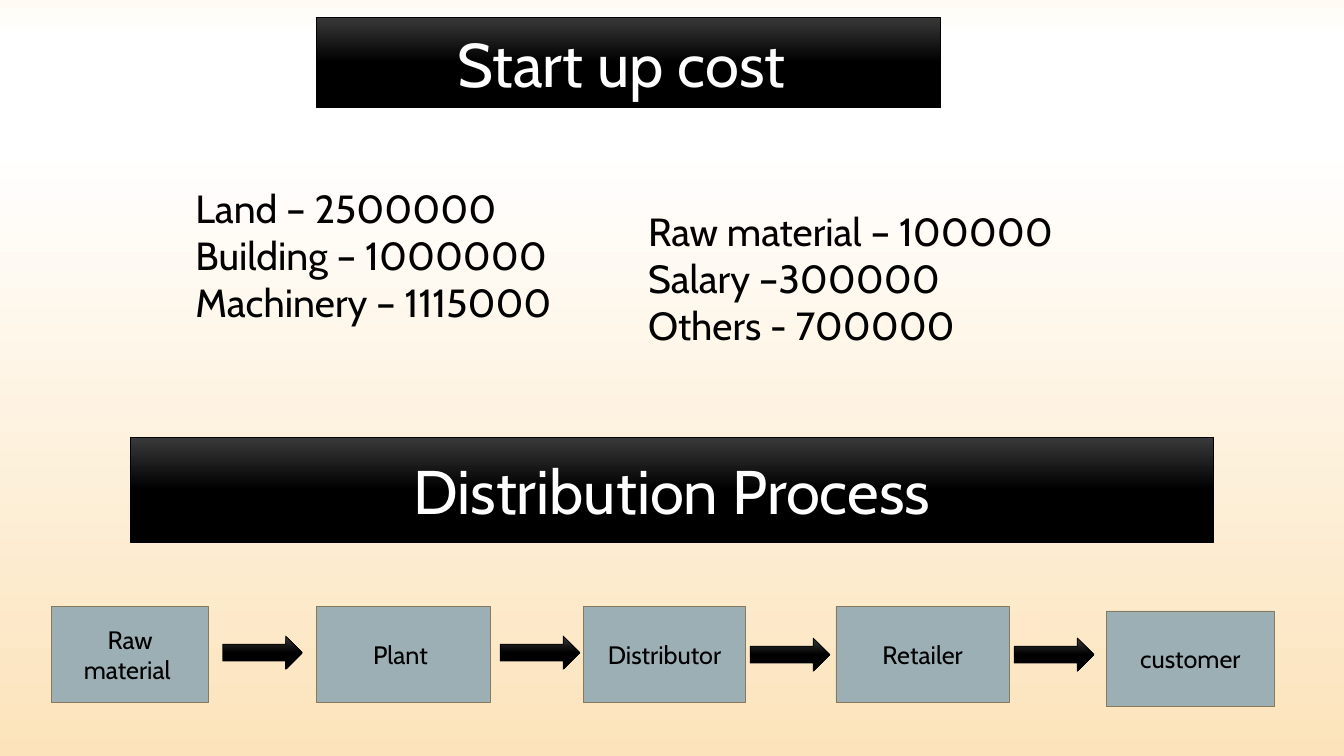
from lxml import etree
from pptx import Presentation
from pptx import util as u
from pptx.dml.color import RGBColor
from pptx.enum import shapes, text
from pptx.oxml.ns import qn

HUES = {
    "ink": "000000", "coal": "393939", "paper": "FFFFFF", "cream": "FFFAF4",
    "sand": "FCE3BB", "slate": "9BAFB5", "edge": "87795D",
}
DARK = [(0, "coal"), (50, "ink"), (100, "ink")]
DAWN = [(0, "cream"), (5, "paper"), (19, "paper"), (100, "sand")]
FACE = "Cabin"


def hue(name):
    return RGBColor.from_string(HUES[name])


def part(box, left, top, width, height):
    x, y, w, h = box
    return (int(x + w * left / 100), int(y + h * top / 100),
            int(w * width / 100), int(h * height / 100))


def fade(fill, root, stops):
    fill.gradient()
    fill.gradient_angle = 270
    ramp = next(root.iter(qn("a:gsLst")))
    for stop in list(ramp):
        ramp.remove(stop)
    for share, name in stops:
        stop = etree.SubElement(ramp, qn("a:gs"), pos=str(share * 1000))
        etree.SubElement(stop, qn("a:srgbClr"), val=HUES[name])


def edge(shape, name):
    shape.line.color.rgb = hue(name)
    shape.line.width = u.Pt(0.5)


def darken(shape):
    fade(shape.fill, shape._element, DARK)
    edge(shape, "ink")


def write(shape, lines, size, name, align):
    frame = shape.text_frame
    frame.word_wrap = True
    frame.text = "\n".join(lines)
    for line in frame.paragraphs:
        line.alignment = align
        line.font.size = u.Pt(size)
        line.font.name = FACE
        line.font.color.rgb = hue(name)


def center(shape, words, size, name):
    write(shape, [words], size, name, text.PP_ALIGN.CENTER)
    shape.text_frame.vertical_anchor = text.MSO_ANCHOR.MIDDLE


def block(slide, kind, box):
    shape = slide.shapes.add_shape(kind, *box)
    shape.shadow.inherit = False
    return shape


def banner(shape, words):
    darken(shape)
    center(shape, words, 44, "paper")


def heading(slide, box, words):
    title = slide.shapes.title
    title.left, title.top, title.width, title.height = box
    banner(title, words)
    title.text_frame.auto_size = text.MSO_AUTO_SIZE.NONE


def costs(slide, box, lines):
    note = slide.shapes.add_textbox(*box)
    write(note, lines, 28, "ink", text.PP_ALIGN.LEFT)
    note.text_frame.auto_size = text.MSO_AUTO_SIZE.SHAPE_TO_FIT_TEXT


def flow(slide, box):
    steps = [
        ("Raw material ", 0, 0, 12.86),
        ("Plant ", 21.68, 0, 14.18),
        ("Distributor", 43.53, 0, 13.19),
        ("Retailer", 64.14, 0, 14.18),
        ("customer", 86.23, 4.04, 13.77),
    ]
    for words, left, top, width in steps:
        step = block(slide, shapes.MSO_SHAPE.RECTANGLE,
                     part(box, left, top, width, 95.96))
        step.fill.solid()
        step.fill.fore_color.rgb = hue("slate")
        edge(step, "edge")
        center(step, words, 18, "ink")
    for left, top in [(14.01, 29.29), (36.69, 29.29),
                      (57.13, 31.31), (78.73, 31.31)]:
        darken(block(slide, shapes.MSO_SHAPE.RIGHT_ARROW,
                     part(box, left, top, 6.51, 33.33)))


def main():
    deck = Presentation()
    deck.slide_width, deck.slide_height = u.Inches(13.33), u.Inches(7.5)
    page = (0, 0, deck.slide_width, deck.slide_height)
    slide = deck.slides.add_slide(deck.slide_layouts[5])
    fade(slide.background.fill, slide._element, DAWN)
    heading(slide, part(page, 23.55, 2.27, 46.43, 12), "Start up cost ")
    costs(slide, part(page, 13.8, 23.73, 29.33, 26.53),
          ["Land – 2500000", "Building – 1000000", "Machinery – 1115000"])
    costs(slide, part(page, 47.48, 26.8, 32.33, 20.13),
          ["Raw material – 100000", "Salary –300000", "Others - 700000"])
    banner(block(slide, shapes.MSO_SHAPE.RECTANGLE,
                 part(page, 9.68, 57.87, 80.63, 13.87)),
           "Distribution Process")
    flow(slide, part(page, 3.83, 80.27, 91, 13.2))
    deck.save("out.pptx")


if __name__ == "__main__":
    main()
